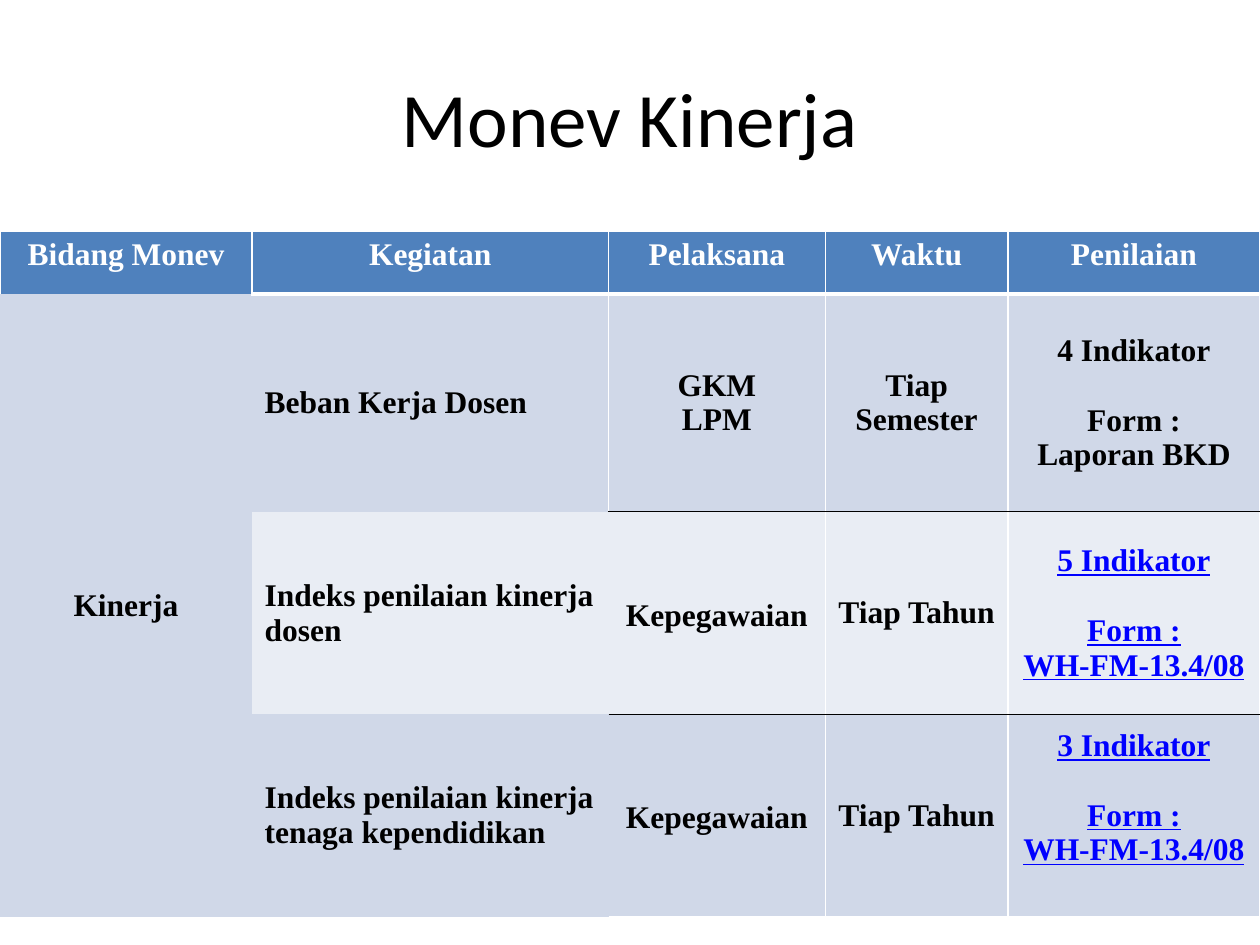
from dataclasses import dataclass

import lxml.etree
import pptx
import pptx.dml.color
import pptx.enum.text
import pptx.oxml.ns
import pptx.util

Pt = pptx.util.Pt
ALIGN = pptx.enum.text.PP_ALIGN
ANCHOR = pptx.enum.text.MSO_ANCHOR


@dataclass(frozen=True)
class Theme:
    title_font: str = "Calibri"
    table_font: str = "Times New Roman"
    title_size: int = 44
    table_size: int = 18
    ink: str = "000000"
    paper: str = "FFFFFF"
    reference: str = "0000FF"
    header: str = "4F81BD"
    band_dark: str = "D0D8E8"
    band_light: str = "E9EDF4"


THEME = Theme()


def rgb(color):
    return pptx.dml.color.RGBColor.from_string(color)


def write_text(frame, text, *, font, size, color, bold=False, underline=False,
               align=ALIGN.CENTER, line_spacing=None, gap_after_first=0):
    """Fill a text frame, one paragraph for each line of the text."""
    for number, line in enumerate(text.split("\n")):
        paragraph = frame.add_paragraph() if number else frame.paragraphs[0]
        paragraph.alignment = align
        if line_spacing:
            paragraph.line_spacing = line_spacing
        if number == 0 and gap_after_first:
            paragraph.space_after = Pt(gap_after_first)
        run = paragraph.add_run()
        run.text = line
        run.font.name = font
        run.font.size = Pt(size)
        run.font.bold = bold
        run.font.underline = underline
        run.font.color.rgb = rgb(color)


def set_borders(cell, edges):
    """Draw the edges given as {side: (color, width)} and hide the others."""
    properties = cell._tc.get_or_add_tcPr()
    qn = pptx.oxml.ns.qn
    for position, side in enumerate("LRTB"):
        color, width = edges.get(side, (None, 0))
        line = lxml.etree.Element(qn(f"a:ln{side}"), w=str(int(Pt(width))))
        if color:
            fill = lxml.etree.SubElement(line, qn("a:solidFill"))
            lxml.etree.SubElement(fill, qn("a:srgbClr"), val=color)
        else:
            lxml.etree.SubElement(line, qn("a:noFill"))
        properties.insert(position, line)


def monev_edges(row, column, last_row):
    """Rules: white grid, black between activities, open first two columns."""
    thin, heavy = (THEME.paper, 1), (THEME.paper, 3)
    divider = (THEME.ink, 1)
    if row == 0:
        edges = {"L": thin, "R": thin, "T": thin}
        return edges | ({"B": heavy} if column else {})
    if column == 0:
        return {}
    if column == 1:
        return {"T": heavy, "R": thin} if row == 1 else {}
    edges = {
        "R": thin,
        "T": heavy if row == 1 else divider,
        "B": thin if row == last_row else divider,
    }
    if column > 2 or row == 1:
        edges["L"] = thin
    return edges


class SlideBuilder:
    def __init__(self, presentation, theme):
        self.theme = theme
        self.slide = presentation.slides.add_slide(presentation.slide_layouts[5])
        self.slide.background.fill.solid()
        self.slide.background.fill.fore_color.rgb = rgb(theme.paper)

    def title(self, text, left, top, width, height):
        heading = self.slide.shapes.title
        heading.left, heading.top = Pt(left), Pt(top)
        heading.width, heading.height = Pt(width), Pt(height)
        heading.text_frame.vertical_anchor = ANCHOR.MIDDLE
        write_text(heading.text_frame, text, font=self.theme.title_font,
                   size=self.theme.title_size, color=self.theme.ink)

    def table(self, left, top, widths, heights):
        grid = self.slide.shapes.add_table(
            len(heights), len(widths), Pt(left), Pt(top),
            Pt(sum(widths)), Pt(sum(heights))).table
        for column, width in zip(grid.columns, widths):
            column.width = Pt(width)
        for row, height in zip(grid.rows, heights):
            row.height = Pt(height)
        return grid

    def cell(self, cell, text, fill, edges, anchor=ANCHOR.MIDDLE, **text_format):
        cell.fill.solid()
        cell.fill.fore_color.rgb = rgb(fill)
        set_borders(cell, edges)
        cell.vertical_anchor = anchor
        if text:
            write_text(cell.text_frame, text, font=self.theme.table_font,
                       size=self.theme.table_size, bold=True, **text_format)


MONEV_ROWS = [
    ["Bidang Monev", "Kegiatan", "Pelaksana", "Waktu", "Penilaian"],
    ["Kinerja", "Beban Kerja Dosen", "GKM\nLPM", "Tiap Semester",
     "4 Indikator\nForm :\nLaporan BKD"],
    ["", "Indeks penilaian kinerja dosen", "Kepegawaian", "Tiap Tahun",
     "5 Indikator\nForm :\nWH-FM-13.4/08"],
    ["", "Indeks penilaian kinerja tenaga kependidikan", "Kepegawaian",
     "Tiap Tahun", "3 Indikator\nForm :\nWH-FM-13.4/08"],
]


def cell_format(row, column):
    """Text format of a table cell, by its place in the grid."""
    if row == 0:
        return {"color": THEME.paper, "anchor": ANCHOR.TOP}
    style = {"color": THEME.ink}
    if column == 1:
        style["align"] = ALIGN.LEFT
    if column == 2 and row > 1:
        style["line_spacing"] = 1.15
    if column == 4:
        style["gap_after_first"] = 20
        if row > 1:
            style |= {"color": THEME.reference, "underline": True}
    return style


def main():
    presentation = pptx.Presentation()
    presentation.slide_width, presentation.slide_height = Pt(720), Pt(540)
    builder = SlideBuilder(presentation, THEME)

    # Heading
    builder.title("Monev Kinerja", 36, 21.6, 648, 90)

    # Monitoring table
    monev = builder.table(0, 132, [144, 203.8, 123.8, 104.4, 144],
                          [36, 124.4, 115.8, 115.8])
    last_row = len(MONEV_ROWS) - 1
    for row, texts in enumerate(MONEV_ROWS):
        for column, text in enumerate(texts):
            if row == 0:
                fill = THEME.header
            elif row == 2 and column:
                fill = THEME.band_light
            else:
                fill = THEME.band_dark
            builder.cell(monev.cell(row, column), text, fill,
                         monev_edges(row, column, last_row),
                         **cell_format(row, column))

    # One area spans all activities
    monev.cell(1, 0).merge(monev.cell(last_row, 0))

    # The last assessment sits a little higher in its cell
    monev.cell(last_row, 4).margin_bottom = Pt(24)

    # Tight margins for the first staff office cell
    staff_office = monev.cell(2, 2)
    staff_office.margin_left = staff_office.margin_right = Pt(5)
    staff_office.margin_top = staff_office.margin_bottom = 0

    presentation.save("out.pptx")


if __name__ == "__main__":
    main()
